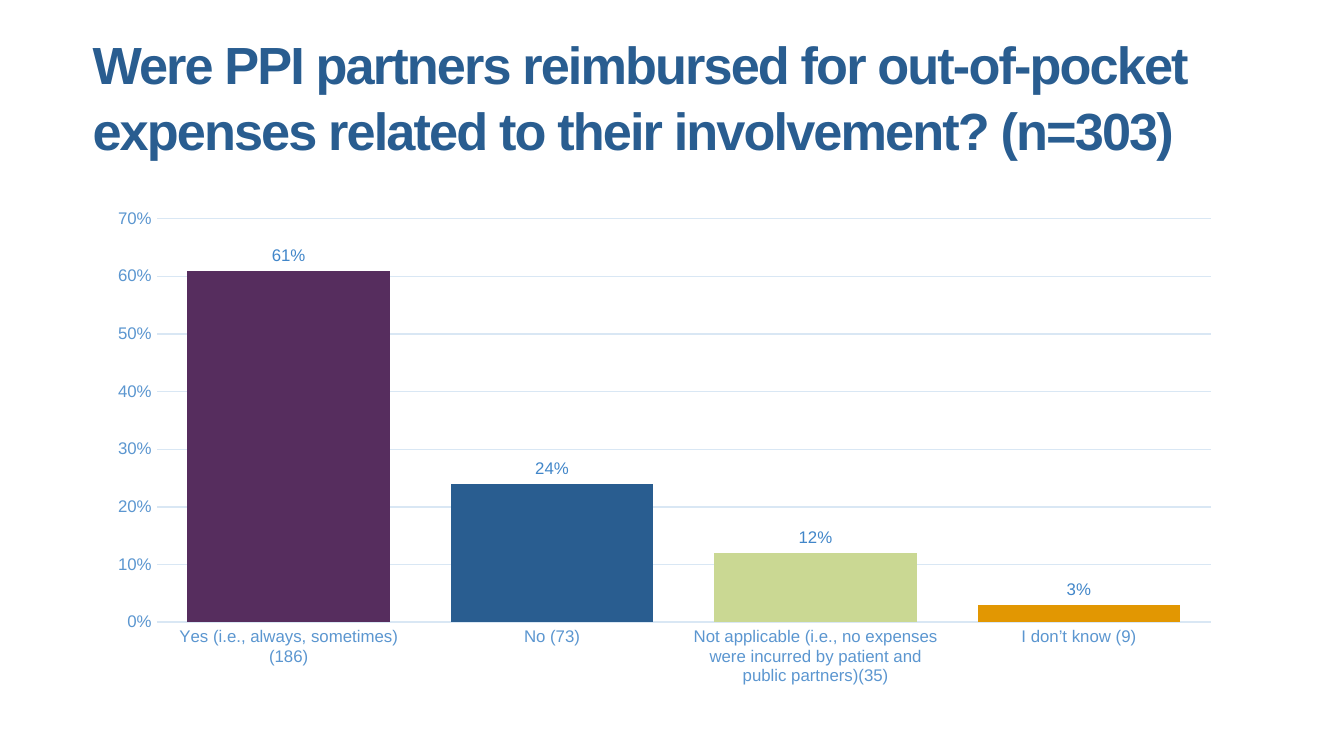
from pptx import Presentation
from pptx.chart.data import CategoryChartData
from pptx.dml.color import RGBColor
from pptx.enum.chart import XL_CHART_TYPE as ChartType
from pptx.enum.chart import XL_LABEL_POSITION as LabelPosition
from pptx.enum.chart import XL_TICK_MARK as TickMark
from pptx.enum.text import MSO_ANCHOR as Anchor
from pptx.util import Cm, Pt

TITLE = ("Were PPI partners reimbursed for out-of-pocket expenses "
         "related to their involvement? (n=303)")
ANSWERS = [  # answer, share, bar colour
    ("Yes (i.e., always, sometimes) (186)", 0.61, "562D5E"),
    ("No (73)", 0.24, "295D90"),
    ("Not applicable (i.e., no expenses were incurred by patient and "
     "public partners)(35)", 0.12, "CAD893"),
    ("I don’t know (9)", 0.03, "E29702"),
]
FONT = "Arial"
BLUE, AXIS_BLUE, LABEL_BLUE = "295D90", "5B96D0", "4186C9"
GRID, GREY = "D9E7F4", "BFBFBF"


def color(hex_string):
    return RGBColor.from_string(hex_string)


def style_font(font, size, hex_string):
    font.name, font.size = FONT, Pt(size)
    font.color.rgb = color(hex_string)


def style_line(line):
    line.color.rgb = color(GRID)
    line.width = Pt(0.75)


def fill(fmt, hex_string):
    fmt.fill.solid()
    fmt.fill.fore_color.rgb = color(hex_string)


def add_title(slide):
    frame = slide.shapes.add_textbox(Cm(1.75), Cm(0.28), Cm(21.46), Cm(2.77)).text_frame
    frame.word_wrap = True
    frame.vertical_anchor = Anchor.BOTTOM
    frame.margin_left = frame.margin_right = frame.margin_top = frame.margin_bottom = 0
    paragraph = frame.paragraphs[0]
    paragraph.line_spacing = 1.05
    run = paragraph.add_run()
    run.text = TITLE
    style_font(paragraph.font, 28, BLUE)
    paragraph.font.bold = True
    run.font._element.set("spc", "-100")  # letter spacing of -1 pt


def add_answer_chart(slide):
    answers, shares, bar_colors = zip(*ANSWERS)
    data = CategoryChartData(number_format="0%")
    data.categories = answers
    data.add_series("Series 1", shares)
    chart = slide.shapes.add_chart(ChartType.COLUMN_CLUSTERED, Cm(1.8), Cm(3.76),
                                   Cm(21.51), Cm(9.4), data).chart
    chart.has_legend = chart.has_title = False
    style_font(chart.font, 10, BLUE)

    for axis in (chart.category_axis, chart.value_axis):
        axis.major_tick_mark = axis.minor_tick_mark = TickMark.NONE
        style_font(axis.tick_labels.font, 9, AXIS_BLUE)
    style_line(chart.category_axis.format.line)

    value_axis = chart.value_axis
    value_axis.minimum_scale, value_axis.maximum_scale = 0, 0.7
    value_axis.major_unit = 0.1
    value_axis.format.line.fill.background()
    value_axis.tick_labels.number_format = "0%"
    value_axis.tick_labels.number_format_is_linked = False
    style_line(value_axis.major_gridlines.format.line)

    plot = chart.plots[0]
    plot.gap_width, plot.overlap = 30, -27
    plot.vary_by_categories = False
    series = plot.series[0]
    fill(series.format, GREY)
    for index, bar_color in enumerate(bar_colors):
        fill(series.points[index].format, bar_color)

    labels = series.data_labels
    labels.show_value = True
    labels.position = LabelPosition.OUTSIDE_END
    labels.number_format = "0%"
    labels.number_format_is_linked = False
    style_font(labels.font, 9, LABEL_BLUE)


def main():
    presentation = Presentation()
    presentation.slide_width, presentation.slide_height = Cm(25.4), Cm(14.29)
    slide = presentation.slides.add_slide(presentation.slide_layouts[6])
    add_title(slide)
    add_answer_chart(slide)
    presentation.save("out.pptx")


if __name__ == "__main__":
    main()
